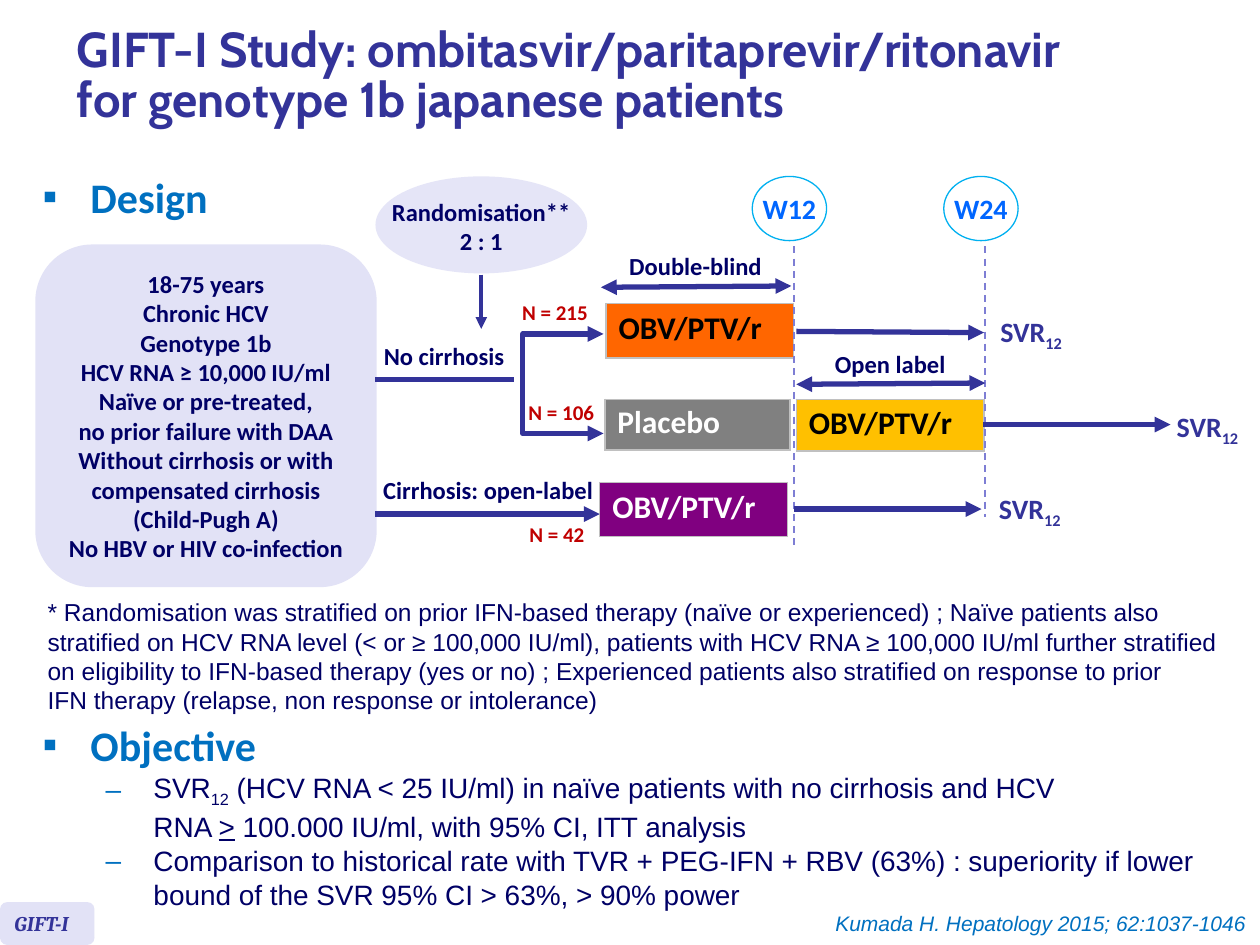
from pptx import Presentation
from pptx.dml.color import RGBColor
from pptx.enum.dml import MSO_LINE
from pptx.enum.shapes import MSO_CONNECTOR, MSO_SHAPE
from pptx.enum.text import MSO_ANCHOR, PP_ALIGN
from pptx.oxml.ns import qn
from pptx.util import Inches, Pt
from lxml import etree

LEFT, CENTER, RIGHT = PP_ALIGN.LEFT, PP_ALIGN.CENTER, PP_ALIGN.RIGHT
TOP, MIDDLE = MSO_ANCHOR.TOP, MSO_ANCHOR.MIDDLE
OVAL, ROUNDED = MSO_SHAPE.OVAL, MSO_SHAPE.ROUNDED_RECTANGLE
STRAIGHT, DASH = MSO_CONNECTOR.STRAIGHT, MSO_LINE.DASH

INDIGO, NAVY, BLUE, RED = "333399", "000066", "0070C0", "C00000"
LAVENDER, WHITE, BLACK = "E2E2F6", "FFFFFF", "000000"

TITLE = dict(name="Cabin", size=28, color=INDIGO, bold=True)
HEADING = dict(name="Calibri", size=24, color=BLUE, bold=True)
LABEL = dict(name="Calibri", size=14, color=NAVY, bold=True)
COUNT = dict(LABEL, size=12, color=RED)
WEEK = dict(LABEL, size=16, color="0066FF")
OUTCOME = dict(LABEL, size=16, color=INDIGO)
ARM = dict(LABEL, size=18)
NOTE = dict(name="Arial", size=14, color=NAVY, bold=False)
BODY = dict(NOTE, size=16)
CITATION = dict(name="Arial", size=12, color=BLUE, italic=True)
TAG = dict(name="Cambria", size=12, color=INDIGO, bold=True, italic=True)


def rgb(value):
    return RGBColor.from_string(value)


def add_xml(parent, tag, **attributes):
    return etree.SubElement(parent, qn(tag), attributes)


class Sketch:
    """Draws styled elements on the current slide."""

    def __init__(self, slide):
        self.slide = slide
        self.shapes = slide.shapes

    def style_font(self, font, style):
        for name, value in style.items():
            if name == "color":
                font.color.rgb = rgb(value)
            else:
                setattr(font, name, Pt(value) if name == "size" else value)

    def add_runs(self, paragraph, runs, style):
        for text, baseline, underline in runs:
            for index, line in enumerate(text.split("\n")):
                if index:
                    paragraph.add_line_break()
                run = paragraph.add_run()
                run.text = line
                self.style_font(run.font, style)
                if underline:
                    run.font.underline = True
                if baseline:
                    run._r.get_or_add_rPr().set("baseline", str(baseline))

    def fill_text(self, frame, lines, style, align, anchor, wrap):
        frame.word_wrap = wrap
        frame.vertical_anchor = anchor
        for index, line in enumerate(lines):
            paragraph = frame.add_paragraph() if index else frame.paragraphs[0]
            paragraph.alignment = align
            runs = [(line, 0, False)] if isinstance(line, str) else line
            self.add_runs(paragraph, runs, style)

    def title(self, box, text, style):
        title = self.shapes.title
        title.left, title.top, title.width, title.height = map(Inches, box)
        self.fill_text(title.text_frame, [text], style, LEFT, MIDDLE, True)
        title.text_frame.paragraphs[0].line_spacing = 0.85

    def text(self, box, lines, style, align=CENTER, wrap=False):
        frame = self.shapes.add_textbox(*map(Inches, box)).text_frame
        self.fill_text(frame, lines, style, align, TOP, wrap)

    def bullets(self, box, items):
        frame = self.shapes.add_textbox(*map(Inches, box)).text_frame
        frame.word_wrap = True
        for index, (level, runs) in enumerate(items):
            paragraph = frame.add_paragraph() if index else frame.paragraphs[0]
            paragraph.level = level
            properties = paragraph._p.get_or_add_pPr()
            properties.set("marL", str(Inches(0.38 + 0.5 * level)))
            properties.set("indent", str(-Inches(0.38)))
            add_xml(add_xml(properties, "a:buClr"), "a:srgbClr", val=BLUE)
            add_xml(properties, "a:buFont", typeface="Arial")
            add_xml(properties, "a:buChar", char="▪–"[level])
            if index:
                paragraph.space_before = Pt(0.7)
            self.add_runs(paragraph, runs, BODY if level else HEADING)

    def shape(self, kind, box, fill, lines, style, line=None, align=CENTER,
              anchor=MIDDLE, wrap=False):
        shape = self.shapes.add_shape(kind, *map(Inches, box))
        shape.shadow.inherit = False
        shape.fill.solid()
        shape.fill.fore_color.rgb = rgb(fill)
        if line:
            shape.line.color.rgb = rgb(line)
            shape.line.width = Pt(0.75)
        else:
            shape.line.fill.background()
        self.fill_text(shape.text_frame, lines, style, align, anchor, wrap)

    def stroke(self, shape, color, width, ends):
        shape.line.color.rgb = rgb(color)
        shape.line.width = Pt(width)
        for end in ends:
            add_xml(shape._element.spPr.find(qn("a:ln")), f"a:{end}End", type="triangle")

    def line(self, start, finish, ends=(), color=INDIGO, width=3, dash=None):
        line = self.shapes.add_connector(STRAIGHT, *map(Inches, start + finish))
        add_xml(line._element.spPr, "a:effectLst")
        if dash:
            line.line.dash_style = dash
        self.stroke(line, color, width, ends)

    def bracket(self, points):
        start, *rest = [tuple(map(Inches, point)) for point in points]
        builder = self.shapes.build_freeform(*start)
        builder.add_line_segments(rest, close=False)
        bracket = builder.convert_to_shape()
        bracket.shadow.inherit = False
        bracket.fill.background()
        self.stroke(bracket, INDIGO, 3, ("head", "tail"))

    def arm(self, box, name, fill, color):
        table = self.shapes.add_table(1, 1, *map(Inches, box)).table
        cell = table.cell(0, 0)
        properties = cell._tc.get_or_add_tcPr()
        for side in ("L", "R", "T", "B"):
            border = add_xml(properties, f"a:ln{side}", w=str(Pt(1)))
            add_xml(add_xml(border, "a:solidFill"), "a:srgbClr", val="C0C0C0")
        cell.fill.solid()
        cell.fill.fore_color.rgb = rgb(fill)
        cell.vertical_anchor = MIDDLE
        paragraph = cell.text_frame.paragraphs[0]
        paragraph.line_spacing = 0.8
        self.add_runs(paragraph, [(name, 0, False)], dict(ARM, color=color))


def main():
    deck = Presentation()
    deck.slide_width, deck.slide_height = Inches(10), Inches(7.5)
    sketch = Sketch(deck.slides.add_slide(deck.slide_layouts[5]))
    svr = [("SVR", 0, False), ("12", -25000, False)]

    sketch.title((0.51, 0.08, 9.13, 1.07),
                 "GIFT-I Study: ombitasvir/paritaprevir/ritonavir\n"
                 "for genotype 1b japanese patients", TITLE)
    sketch.shape(ROUNDED, (0, 7.16, 0.75, 0.34), LAVENDER, ["GIFT-I"], TAG, align=LEFT)
    sketch.text((6.51, 7.18, 3.48, 0.3),
                ["Kumada H. Hepatology 2015; 62:1037-1046"], CITATION, RIGHT)
    sketch.bullets((0.24, 1.31, 1.8, 0.5), [(0, [("Design", 0, False)])])
    sketch.bullets((0.24, 5.66, 9.74, 1.57), [
        (0, [("Objective", 0, False)]),
        (1, svr + [(" (HCV RNA < 25 IU/ml) in naïve patients with no cirrhosis and HCV\nRNA ", 0, False),
                   (">", 0, True),
                   (" 100.000 IU/ml, with 95% CI, ITT analysis", 0, False)]),
        (1, [("Comparison to historical rate with TVR + PEG-IFN + RBV (63%) : superiority "
              "if lower bound of the SVR 95% CI > 63%, > 90% power", 0, False)])])

    sketch.shape(OVAL, (2.98, 1.4, 1.68, 0.77), "E5E5F7",
                 ["Randomisation**", "2 : 1"], LABEL, anchor=TOP)
    sketch.shape(ROUNDED, (0.28, 1.94, 2.71, 2.72), LAVENDER, [
        "18-75 years", "Chronic HCV", "Genotype 1b", "HCV RNA ≥ 10,000 IU/ml",
        "Naïve or pre-treated,", "no prior failure with DAA", "Without cirrhosis or with",
        "compensated cirrhosis", "(Child-Pugh A)", "No HBV or HIV co-infection"],
        LABEL, wrap=True)

    for box, name, fill, color in [
            ((4.81, 2.41, 1.49, 0.43), "OBV/PTV/r", "FF6600", BLACK),
            ((4.8, 3.17, 1.47, 0.4), "Placebo", "808080", WHITE),
            ((6.32, 3.17, 1.49, 0.41), "OBV/PTV/r", "FFC000", BLACK),
            ((4.76, 3.83, 1.49, 0.43), "OBV/PTV/r", "800080", WHITE)]:
        sketch.arm(box, name, fill, color)

    for week, x, bottom in [("W12", 6.3, 4.34), ("W24", 7.82, 4.1)]:
        sketch.line((x, 1.86), (x, bottom), color="7E7ED4", width=1, dash=DASH)
        sketch.shape(OVAL, (x - 0.33, 1.4, 0.59, 0.51), WHITE, [week], WEEK, line="00B0F0")

    sketch.line((3.82, 2.18), (3.82, 2.61), ("tail",), width=2.25)
    sketch.line((2.98, 3.01), (4.08, 3.01))
    sketch.bracket([(4.79, 2.65), (4.15, 2.65), (4.15, 3.44), (4.79, 3.44)])
    for start, finish in [((6.32, 2.63), (7.81, 2.64)), ((7.8, 3.37), (9.29, 3.37)),
                          ((2.98, 4.08), (4.76, 4.08)), ((6.3, 4.04), (7.79, 4.04))]:
        sketch.line(start, finish, ("tail",))
    for start, finish in [((4.77, 2.28), (6.28, 2.27)), ((6.32, 3.05), (7.82, 3.04))]:
        sketch.line(start, finish, ("head", "tail"))

    for box, label, style in [
            ((4.04, 2.33, 0.73, 0.3), "N = 215", COUNT),
            ((4.09, 3.12, 0.73, 0.3), "N = 106", COUNT),
            ((4.1, 4.09, 0.64, 0.3), "N = 42", COUNT),
            ((4.89, 1.94, 1.26, 0.34), "Double-blind", LABEL),
            ((6.52, 2.72, 1.09, 0.34), "Open label", LABEL),
            ((2.94, 2.66, 1.17, 0.34), "No cirrhosis", LABEL),
            ((2.91, 3.72, 1.93, 0.34), "Cirrhosis: open-label", LABEL)]:
        sketch.text(box, [label], style)
    for x, y in [(7.84, 2.45), (9.24, 3.2), (7.83, 3.85)]:
        sketch.text((x, y, 0.72, 0.37), [svr], OUTCOME, LEFT)

    sketch.text((0.28, 4.69, 9.56, 1.04), [
        "* Randomisation was stratified on prior IFN-based therapy (naïve or experienced) ; Naïve patients also",
        "stratified on HCV RNA level (< or ≥ 100,000 IU/ml), patients with HCV RNA ≥ 100,000 IU/ml further stratified",
        "on eligibility to IFN-based therapy (yes or no) ; Experienced patients also stratified on response to prior",
        "IFN therapy (relapse, non response or intolerance)"], NOTE, LEFT)
    deck.save("out.pptx")


if __name__ == "__main__":
    main()
